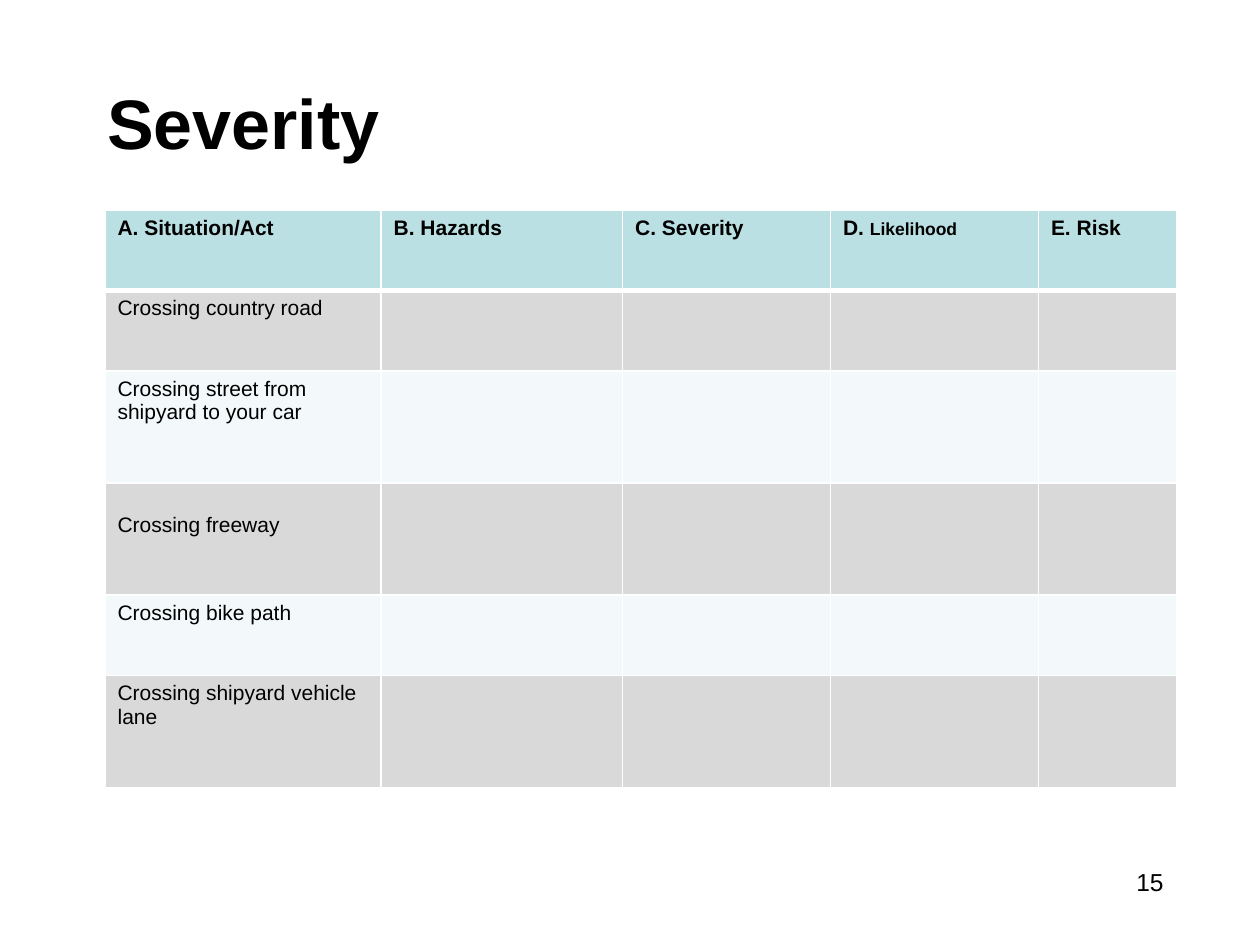
import dataclasses

import lxml.etree
import pptx
import pptx.dml.color
import pptx.enum.text
import pptx.oxml.ns
import pptx.util

Pt = pptx.util.Pt


def rgb(value):
    return pptx.dml.color.RGBColor.from_string(value)


@dataclasses.dataclass(frozen=True)
class Theme:
    font: str = "Arial"
    text: str = "000000"
    header: str = "BBE0E3"
    bands: tuple = ("D9D9D9", "F3F9FA")
    border: str = "FFFFFF"
    title_size: int = 40
    table_size: int = 12
    small_size: int = 10
    number_size: int = 14


THEME = Theme()

HEADINGS = ["A. Situation/Act", "B. Hazards", "C. Severity", "D. ", "E. Risk"]
LIKELIHOOD_COLUMN = 3
SITUATIONS = [
    "Crossing country road",
    "Crossing street from shipyard to your car",
    "Crossing freeway",
    "Crossing bike path",
    "Crossing shipyard vehicle lane",
]
FREEWAY_ROW = 3
COLUMN_WIDTHS = [157.8, 138, 118.8, 118.8, 79]
ROW_HEIGHTS = [46, 46, 64, 64, 46, 64]


def style_font(font, size, bold=False):
    font.name = THEME.font
    font.size = Pt(size)
    font.bold = bold
    font.color.rgb = rgb(THEME.text)


def set_borders(cell, top, bottom):
    """Draw the cell's four borders; top and bottom are widths in points."""
    properties = cell._tc.get_or_add_tcPr()
    qn = pptx.oxml.ns.qn
    widths = {"a:lnL": 1, "a:lnR": 1, "a:lnT": top, "a:lnB": bottom}
    for position, (tag, width) in enumerate(widths.items()):
        line = lxml.etree.Element(qn(tag), w=str(int(Pt(width))))
        fill = lxml.etree.SubElement(line, qn("a:solidFill"))
        lxml.etree.SubElement(fill, qn("a:srgbClr"), val=THEME.border)
        properties.insert(position, line)


def add_title(slide, left, top, width, height):
    title = slide.shapes.title
    title.left, title.top = Pt(left), Pt(top)
    title.width, title.height = Pt(width), Pt(height)
    frame = title.text_frame
    frame.text = "Severity"
    frame.vertical_anchor = pptx.enum.text.MSO_ANCHOR.MIDDLE
    paragraph = frame.paragraphs[0]
    paragraph.alignment = pptx.enum.text.PP_ALIGN.LEFT
    style_font(paragraph.font, THEME.title_size, bold=True)


def add_risk_table(slide, left, top):
    table = slide.shapes.add_table(
        len(ROW_HEIGHTS), len(COLUMN_WIDTHS), Pt(left), Pt(top),
        Pt(sum(COLUMN_WIDTHS)), Pt(sum(ROW_HEIGHTS))).table
    for column, width in zip(table.columns, COLUMN_WIDTHS):
        column.width = Pt(width)

    # Header row, then situations with the other columns left to fill in
    blanks = [""] * (len(COLUMN_WIDTHS) - 1)
    rows = [HEADINGS] + [[situation] + blanks for situation in SITUATIONS]
    for row_index, texts in enumerate(rows):
        table.rows[row_index].height = Pt(ROW_HEIGHTS[row_index])
        is_header = row_index == 0
        color = THEME.header if is_header else THEME.bands[(row_index - 1) % 2]
        for cell, text in zip(table.rows[row_index].cells, texts):
            cell.text = text
            style_font(cell.text_frame.paragraphs[0].font,
                       THEME.table_size, bold=is_header)
            cell.fill.solid()
            cell.fill.fore_color.rgb = rgb(color)
            set_borders(cell, top=3 if row_index == 1 else 1,
                        bottom=3 if is_header else 1)

    # Smaller word in the likelihood heading
    heading = table.cell(0, LIKELIHOOD_COLUMN).text_frame.paragraphs[0]
    run = heading.add_run()
    run.text = "Likelihood"
    run.font.size = Pt(THEME.small_size)

    # The freeway entry sits one line lower
    table.cell(FREEWAY_ROW, 0).margin_top = Pt(17.4)


def add_page_number(slide, left, top, width, height):
    box = slide.shapes.add_textbox(Pt(left), Pt(top), Pt(width), Pt(height))
    frame = box.text_frame
    frame.word_wrap = True
    frame.text = "15"
    paragraph = frame.paragraphs[0]
    paragraph.alignment = pptx.enum.text.PP_ALIGN.RIGHT
    style_font(paragraph.font, THEME.number_size)


def main():
    presentation = pptx.Presentation()
    presentation.slide_width, presentation.slide_height = Pt(720), Pt(540)
    slide = presentation.slides.add_slide(presentation.slide_layouts[5])
    add_title(slide, 54, 24.5, 612, 90)
    add_risk_table(slide, 60, 120)
    add_page_number(slide, 516, 492, 156, 37.5)
    presentation.save("out.pptx")


if __name__ == "__main__":
    main()
